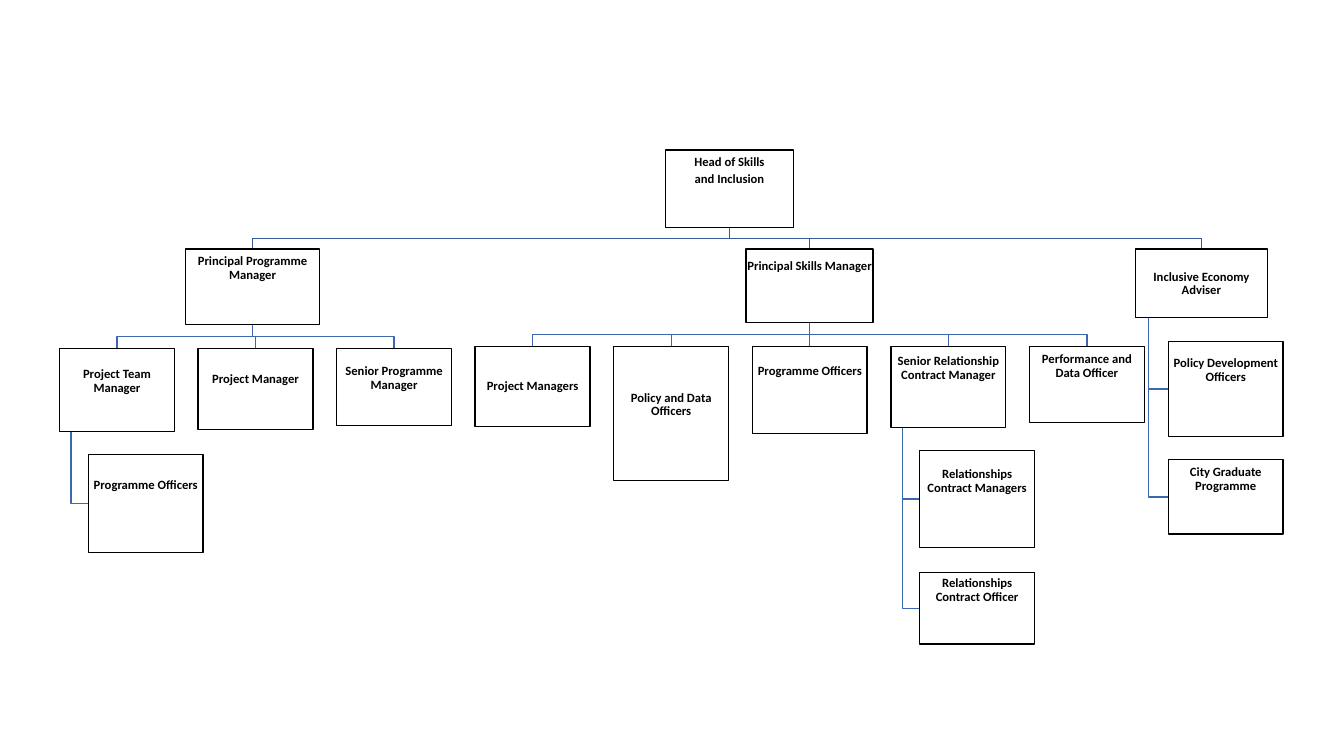
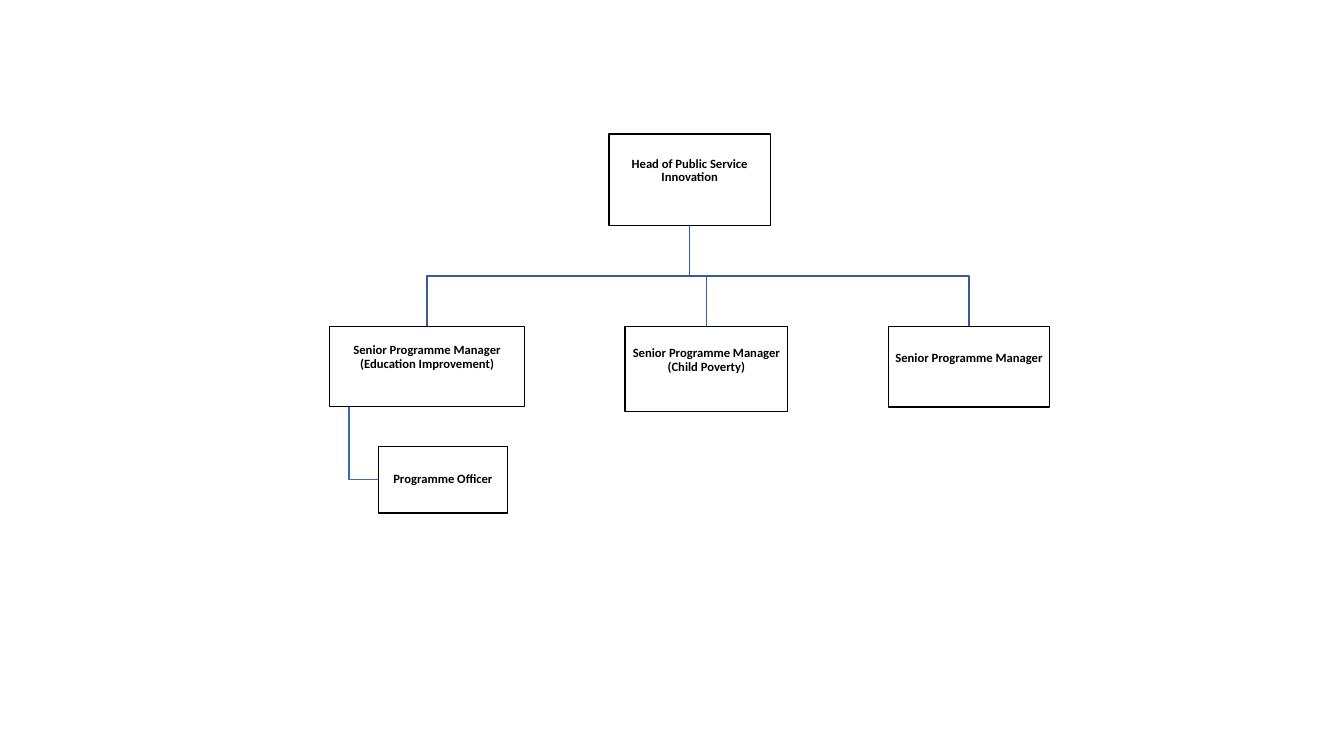
from dataclasses import dataclass

from lxml import etree
from pptx import Presentation
from pptx import util as u
from pptx.dml.color import RGBColor
from pptx.enum import shapes, text
from pptx.oxml.ns import qn

COLORS = {"ink": "000000", "top": "365B9D", "low": "3E67B2"}
FONT = "Calibri"
WIDE = 1.14                      # width of a staff box
LEFT, STEP = 0.59, (10.21 - 0.59) / 7


@dataclass
class Post:
    """A box of the chart; pad is the gap above its text."""
    label: str
    x: float
    y: float
    w: float
    h: float
    pad: float
    below: tuple = ()            # posts hung under the box
    beside: tuple = ()           # posts hung at its left edge

    @property
    def mid(self):
        return self.x + self.w / 2

    @property
    def foot(self):
        return self.y + self.h


def staff(col, y, h, label, pad, beside=()):
    """A post in the evenly spaced staff row."""
    return Post(label, LEFT + col * STEP, y, WIDE, h, pad, beside=beside)


def aide(y, h, label, pad, w=WIDE):
    """A post whose left edge is set by its lead."""
    return Post(label, 0, y, w, h, pad)


# Text and lines

def write(frame, words, size=9, bold=True, color="ink", pad=0.0, after=3):
    frame.word_wrap = True
    frame.vertical_anchor = text.MSO_ANCHOR.TOP
    frame.margin_left = frame.margin_right = frame.margin_bottom = 0
    frame.margin_top = u.Inches(pad)
    for i, line in enumerate(words.split("\n")):
        para = frame.add_paragraph() if i else frame.paragraphs[0]
        para.alignment = text.PP_ALIGN.CENTER
        para.line_spacing = 0.9
        para.space_after = u.Pt(after)
        run = para.add_run()
        run.text = line
        run.font.name, run.font.size, run.font.bold = FONT, u.Pt(size), bold
        run.font.color.rgb = RGBColor.from_string(COLORS[color])


def stroke(shape, color):
    shape.line.color.rgb = RGBColor.from_string(COLORS[color])
    shape.line.width = u.Pt(1)


def wire(slide, points, color):
    """A bent line, or a plain one where all points share one x."""
    spots = [(u.Inches(x), u.Inches(y)) for x, y in points]
    first, last = spots[0], spots[-1]
    if max(x for x, _ in points) - min(x for x, _ in points) < 0.01:
        line = slide.shapes.add_connector(
            shapes.MSO_CONNECTOR.STRAIGHT, *first, first[0], last[1])
        stroke(line, color)
        etree.SubElement(line._element.spPr, qn("a:effectLst"))
        return
    form = slide.shapes.build_freeform(*first)
    form.add_line_segments(spots[1:], close=False)
    line = form.convert_to_shape()
    line.shadow.inherit = False
    line.fill.background()
    stroke(line, color)


# Chart

def box(slide, post):
    rect = slide.shapes.add_shape(
        shapes.MSO_SHAPE.RECTANGLE,
        *(u.Inches(v) for v in (post.x, post.y, post.w, post.h)))
    rect.shadow.inherit = False
    rect.fill.background()
    stroke(rect, "ink")
    write(rect.text_frame, post.label, pad=post.pad)


def draw(slide, post, color="top"):
    """Draw a post, its wires and all posts it leads."""
    for kid in post.below:
        bus = (post.foot + kid.y) / 2
        wire(slide, [(post.mid, post.foot), (post.mid, bus),
                     (kid.mid, bus), (kid.mid, kid.y)], color)
        draw(slide, kid, "low")
    for kid in post.beside:
        kid.x = post.x + post.w / 4
        rail, level = post.x + post.w / 10, kid.y + kid.h / 2
        wire(slide, [(rail, post.foot), (rail, level), (kid.x, level)], "low")
        draw(slide, kid, "low")
    box(slide, post)


# Content

def skills():
    row, line = 3.46, 3.44
    projects = Post(
        "Principal Programme Manager", 1.84, 2.47, 1.33, 0.75, 0.06, below=(
            staff(0, row, 0.82, "Project Team Manager", 0.19, beside=(
                aide(4.51, 0.97, "Programme Officers", 0.24),)),
            staff(1, row, 0.8, "Project Manager", 0.24),
            staff(2, row, 0.76, "Senior Programme Manager", 0.16)))
    people = Post(
        "Principal Skills Manager", 7.4, 2.47, 1.26, 0.73, 0.11, below=(
            staff(3, line, 0.79, "Project Managers", 0.33),
            staff(4, line, 1.33, "Policy and Data Officers", 0.44),
            staff(5, line, 0.86, "Programme Officers", 0.18),
            staff(6, line, 0.8, "Senior Relationship Contract Manager", 0.08,
                  beside=(
                      aide(4.47, 0.96, "Relationships Contract Managers", 0.17),
                      aide(5.68, 0.71, "Relationships Contract Officer", 0.04))),
            staff(7, line, 0.75, "Performance and Data Officer", 0.06)))
    growth = Post(
        "Inclusive Economy Adviser", 11.26, 2.47, 1.31, 0.68, 0.21, beside=(
            aide(3.39, 0.94, "Policy Development Officers", 0.15),
            aide(4.56, 0.74, "City Graduate Programme", 0.06)))
    return Post("Head of Skills\nand Inclusion", 6.6, 1.49, 1.27, 0.77, 0.05,
                below=(projects, people, growth))


def service():
    row = 3.24
    return Post(
        "Head of Public Service Innovation", 6.04, 1.33, 1.6, 0.91, 0.23, below=(
            Post("Senior Programme Manager (Education Improvement)",
                 3.27, row, 1.93, 0.79, 0.17, beside=(
                     aide(4.43, 0.66, "Programme Officer", 0.26, w=1.28),)),
            Post("Senior Programme Manager (Child Poverty)",
                 6.2, row, 1.61, 0.84, 0.2),
            Post("Senior Programme Manager", 8.81, row, 1.6, 0.8, 0.25)))


def main():
    deck = Presentation()
    deck.slide_width, deck.slide_height = u.Inches(13.33), u.Inches(7.5)
    for chart in (skills(), service()):
        draw(deck.slides.add_slide(deck.slide_layouts[6]), chart)
    deck.save("out.pptx")


if __name__ == "__main__":
    main()
